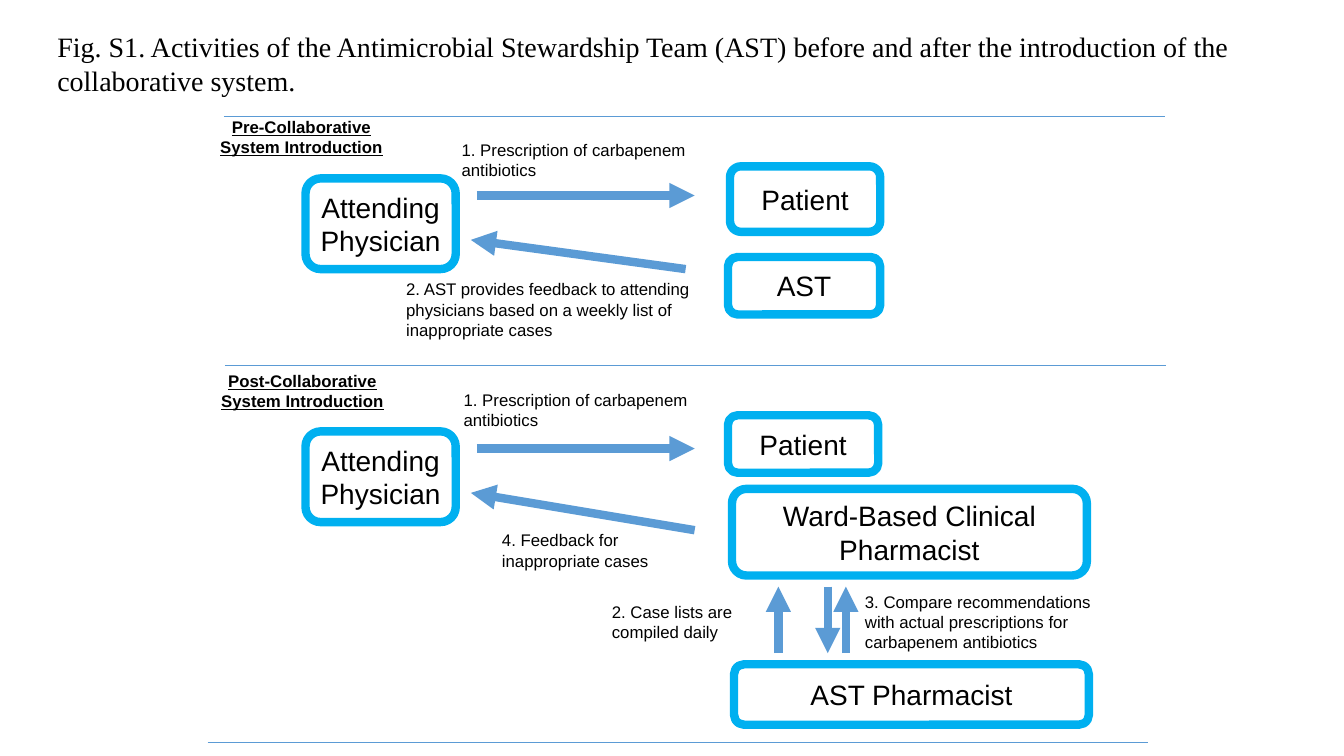
from dataclasses import dataclass

from pptx import Presentation
from pptx.dml.color import RGBColor
from pptx.enum.shapes import MSO_CONNECTOR as Connector, MSO_SHAPE as Shape
from pptx.enum.text import MSO_ANCHOR as Anchor, PP_ALIGN as Align
from pptx.oxml.ns import qn
from pptx.util import Inches, Pt
from lxml.etree import SubElement


@dataclass(frozen=True)
class Theme:
    ink: RGBColor = RGBColor(0x00, 0x00, 0x00)
    paper: RGBColor = RGBColor(0xFF, 0xFF, 0xFF)
    border: RGBColor = RGBColor(0x00, 0xB0, 0xF0)
    flow: RGBColor = RGBColor(0x5B, 0x9B, 0xD5)
    body_font: str = "Arial"
    title_font: str = "Times New Roman"
    large: int = 20
    small: int = 12
    thick: float = 6
    thin: float = 0.5


THEME = Theme()
CELL = 0.1  # grid pitch in inches; all places are (column, row)
RULE_LENGTH = 93.3
ARROW_TOP, ARROW_BOTTOM = 58.2, 64.8


def grid(*cells):
    return [Inches(cell * CELL) for cell in cells]


def write(box, text, size, font=THEME.body_font, align=Align.LEFT, heading=False):
    frame = box.text_frame
    frame.word_wrap = True
    frame.text = text
    para = frame.paragraphs[0]
    para.alignment = align
    style = para.runs[0].font
    style.name, style.size = font, Pt(size)
    style.color.rgb = THEME.ink
    style.bold = style.underline = heading


def add_title(page, text, *area):
    box = page.shapes.add_shape(Shape.RECTANGLE, *grid(*area))
    box.shadow.inherit = False
    box.fill.solid()
    box.fill.fore_color.rgb = THEME.paper
    box.line.fill.background()
    box.text_frame.vertical_anchor = Anchor.MIDDLE
    write(box, text, THEME.large, THEME.title_font)


def add_role(page, text, *area):
    box = page.shapes.add_shape(Shape.ROUNDED_RECTANGLE, *grid(*area))
    box.shadow.inherit = False
    box.fill.background()
    box.line.color.rgb = THEME.border
    box.line.width = Pt(THEME.thick)
    frame = box.text_frame
    frame.margin_left = frame.margin_right = 0
    frame.margin_top = frame.margin_bottom = 0
    frame.vertical_anchor = Anchor.MIDDLE
    write(box, text, THEME.large, align=Align.CENTER)


def add_note(page, text, *area):
    write(page.shapes.add_textbox(*grid(*area)), text, THEME.small)


def add_heading(page, text, *area):
    box = page.shapes.add_textbox(*grid(*area))
    write(box, text, THEME.small, align=Align.CENTER, heading=True)


def add_line(page, start, end, width):
    line = page.shapes.add_connector(Connector.STRAIGHT, *grid(*start, *end))
    line.line.color.rgb = THEME.flow
    line.line.width = Pt(width)
    SubElement(line._element.spPr, qn("a:effectLst"))
    return line


def add_arrow(page, start, end):
    arrow = add_line(page, start, end, THEME.thick)
    SubElement(arrow.line._get_or_add_ln(), qn("a:tailEnd"), type="triangle")


def add_rule(page, column, row):
    add_line(page, (column, row), (column + RULE_LENGTH, row), THEME.thin)


def add_prescribing(page, top, feedback_start):
    """Physician, prescription arrow and feedback arrow, shared by both phases."""
    add_role(page, "Attending Physician", 30.3, top, 14.9, 9)
    add_arrow(page, (47.3, top + 1.7), (68.9, top + 1.7))
    add_arrow(page, feedback_start, (46.7, top + 6.1))


def add_before(page):
    add_rule(page, 22.2, 11.5)
    add_heading(page, "Pre-Collaborative System Introduction", 20.6, 11.1, 18.6, 5)
    add_prescribing(page, 17.7, (68, 26.7))
    add_role(page, "Patient", 72.4, 16.5, 14.9, 6.5)
    add_role(page, "AST", 72.2, 25.5, 15.1, 5.7)
    add_note(page, "1. Prescription of carbapenem antibiotics", 44.8, 13.4, 25, 5)
    add_note(page, "2. AST provides feedback to attending physicians based on "
             "a weekly list of inappropriate cases", 39.3, 27.2, 30.7, 7.1)


def add_after(page):
    add_rule(page, 22.3, 36.2)
    add_heading(page, "Post-Collaborative System Introduction", 20.8, 36.3, 18.4, 5)
    add_prescribing(page, 42.8, (68.9, 52.6))
    add_role(page, "Patient", 72.2, 41.2, 14.9, 5.7)
    add_role(page, "Ward-Based Clinical Pharmacist", 72.6, 48.5, 35.2, 8.6)
    add_role(page, "AST Pharmacist", 72.8, 65.9, 35.2, 6)

    # Exchange between the two pharmacists
    add_arrow(page, (82.1, ARROW_TOP), (82.1, ARROW_BOTTOM))
    for column in (77.2, 83.9):
        add_arrow(page, (column, ARROW_BOTTOM), (column, ARROW_TOP))

    # Numbered steps
    add_note(page, "1. Prescription of carbapenem antibiotics", 45, 38.2, 25, 5)
    add_note(page, "2. Case lists are compiled daily", 59.7, 59.2, 14.9, 5)
    add_note(page, "3. Compare recommendations with actual prescriptions for "
             "carbapenem antibiotics", 84.8, 58.2, 26.9, 7.1)
    add_note(page, "4. Feedback for inappropriate cases", 48.8, 52.1, 18.5, 5)
    add_rule(page, 20.6, 73.6)


def main():
    deck = Presentation()
    deck.slide_width, deck.slide_height = Inches(13.33), Inches(7.5)
    page = deck.slides.add_slide(deck.slide_layouts[6])
    add_title(page, "Fig. S1. Activities of the Antimicrobial Stewardship Team (AST) "
              "before and after the introduction of the collaborative system.",
              4.7, 2.5, 126.4, 7.5)
    add_before(page)
    add_after(page)
    deck.save("out.pptx")


if __name__ == "__main__":
    main()
